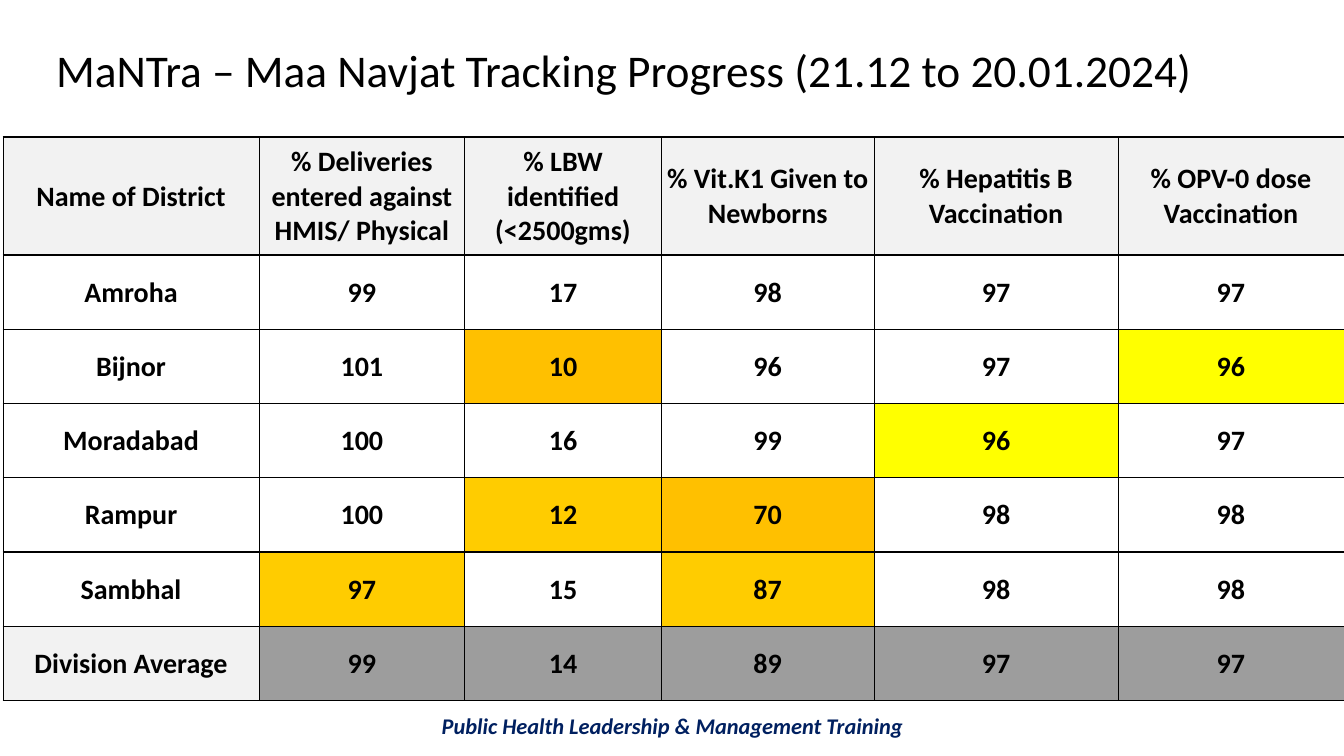
import pptx
import pptx.util
import pptx.dml.color
import pptx.enum.text
import pptx.oxml
import pptx.oxml.ns

Inches = pptx.util.Inches
Pt = pptx.util.Pt
ALIGN = pptx.enum.text.PP_ALIGN
ANCHOR = pptx.enum.text.MSO_ANCHOR

HEADER, AVERAGE = "F2F2F2", "9D9D9D"
ORANGE, AMBER, YELLOW = "FFC000", "FFCC00", "FFFF00"

COLUMN_WIDTHS = [2.54, 2.04, 1.95, 2.11, 2.42, 2.24]
HEADER_HEIGHT = 1.17
ROWS = [
    ["Name of District", "% Deliveries entered against HMIS/ Physical",
     "% LBW identified (<2500gms)", "% Vit.K1 Given to Newborns",
     "% Hepatitis B Vaccination", "% OPV-0 dose Vaccination"],
    ["Amroha", 99, 17, 98, 97, 97],
    ["Bijnor", 101, 10, 96, 97, 96],
    ["Moradabad", 100, 16, 99, 96, 97],
    ["Rampur", 100, 12, 70, 98, 98],
    ["Sambhal", 97, 15, 87, 98, 98],
    ["Division Average", 99, 14, 89, 97, 97],
]
AVERAGE_ROW = len(ROWS) - 1
# Flagged values by (row, column)
HIGHLIGHTS = {(2, 2): ORANGE, (2, 5): YELLOW, (3, 4): YELLOW,
              (4, 2): AMBER, (4, 3): ORANGE, (5, 1): AMBER, (5, 3): AMBER}


def rgb(color):
    return pptx.dml.color.RGBColor.from_string(color)


def write(tf, text, size, color="000000", align=ALIGN.LEFT, bold=False, italic=False):
    tf.text = str(text)
    p = tf.paragraphs[0]
    p.alignment = align
    font = p.runs[0].font
    font.name, font.size = "Calibri", Pt(size)
    font.bold, font.italic = bold, italic
    font.color.rgb = rgb(color)
    return p


def add_text_box(s, box, anchor):
    tf = s.shapes.add_textbox(*map(Inches, box)).text_frame
    tf.word_wrap = True
    tf.vertical_anchor = anchor
    return tf


def add_title(s, box):
    tf = add_text_box(s, box, ANCHOR.MIDDLE)
    p = write(tf, "MaNTra – Maa Navjat Tracking Progress (21.12 to 20.01.2024)", 32.4)
    p.line_spacing = 0.9


def add_footer(s, box):
    tf = add_text_box(s, box, ANCHOR.TOP)
    write(tf, "Public Health Leadership & Management Training", 16, "002060",
          ALIGN.CENTER, bold=True, italic=True)


def cell_color(row, col):
    if row == 0 or (row == AVERAGE_ROW and col == 0):
        return HEADER
    if row == AVERAGE_ROW:
        return AVERAGE
    return HIGHLIGHTS.get((row, col))


def set_borders(cell, top, bottom):
    tcPr = cell._tc.get_or_add_tcPr()
    widths = {"lnL": 0.5, "lnR": 0.5, "lnT": top, "lnB": bottom}
    for i, (tag, width) in enumerate(widths.items()):
        tcPr.insert(i, pptx.oxml.parse_xml(
            f'<a:{tag} {pptx.oxml.ns.nsdecls("a")} w="{Pt(width)}">'
            f'<a:solidFill><a:srgbClr val="000000"/></a:solidFill></a:{tag}>'))


def format_cell(cell, text, color):
    cell.margin_left = cell.margin_right = cell.margin_top = Inches(0.01)
    cell.margin_bottom = 0
    cell.vertical_anchor = ANCHOR.MIDDLE
    write(cell.text_frame, text, 20, align=ALIGN.CENTER, bold=True)
    if color:
        cell.fill.solid()
        cell.fill.fore_color.rgb = rgb(color)
    else:
        cell.fill.background()


def add_district_table(s, box):
    frame = s.shapes.add_table(len(ROWS), len(COLUMN_WIDTHS), *map(Inches, box))
    table = frame.table
    table.horz_banding = False
    for column, width in zip(table.columns, COLUMN_WIDTHS):
        column.width = Inches(width)
    body_height = (box[3] - HEADER_HEIGHT) / AVERAGE_ROW
    for r, values in enumerate(ROWS):
        table.rows[r].height = Inches(body_height if r else HEADER_HEIGHT)
        # Thin rule between the last district and the average
        top = 0.5 if r == AVERAGE_ROW else 1
        bottom = 0.5 if r == AVERAGE_ROW - 1 else 1
        for c, value in enumerate(values):
            cell = table.cell(r, c)
            format_cell(cell, value, cell_color(r, c))
            set_borders(cell, top, bottom)


def main():
    prs = pptx.Presentation()
    prs.slide_width, prs.slide_height = Inches(13.33), Inches(7.5)
    s = prs.slides.add_slide(prs.slide_layouts[6])
    add_footer(s, (0.92, 7.02, 11.5, 0.37))
    add_title(s, (0.46, 0.25, 11.96, 0.94))
    add_district_table(s, (0.03, 1.36, 13.3, 5.59))
    prs.save("out.pptx")


if __name__ == "__main__":
    main()
